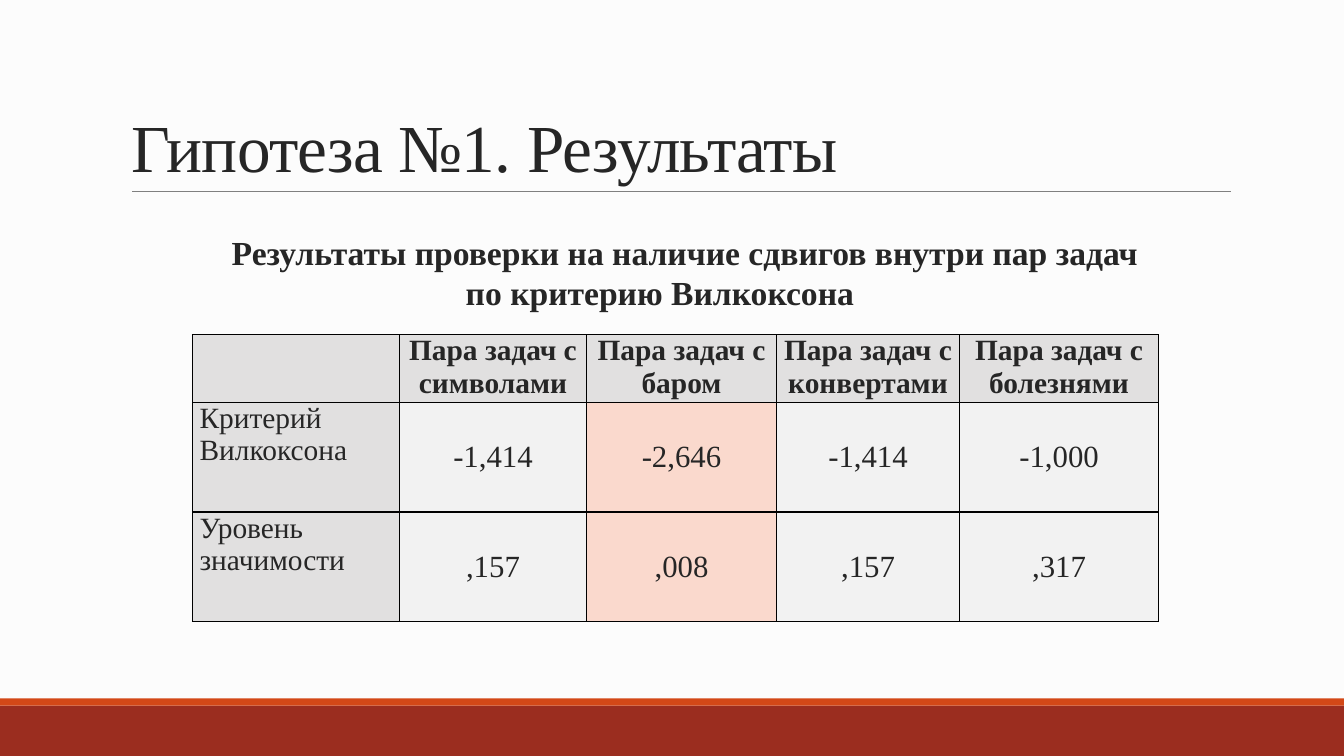
from lxml import etree
from pptx import Presentation
from pptx.dml.color import RGBColor
from pptx.enum import shapes, text
from pptx.oxml import ns
from pptx.util import Inches, Pt

FONT = "Times New Roman"
BACKGROUND = RGBColor(0xFC, 0xFC, 0xFC)
DARK_RED = RGBColor(0x9B, 0x2D, 0x1F)
ORANGE = RGBColor(0xD3, 0x48, 0x17)
RULE_GRAY = RGBColor(0x80, 0x80, 0x80)
INK = RGBColor(0x26, 0x26, 0x26)
HEADER_GRAY = RGBColor(0xE1, 0xE0, 0xE0)
CELL_GRAY = RGBColor(0xF2, 0xF2, 0xF2)
HIGHLIGHT = RGBColor(0xFA, 0xD9, 0xCD)
LEFT, CENTER = text.PP_ALIGN.LEFT, text.PP_ALIGN.CENTER


def write(frame, words, size, bold=False, align=CENTER):
    """Fill the first paragraph of a text frame and return it with its run."""
    para = frame.paragraphs[0]
    para.alignment = align
    span = para.add_run()
    span.text = words
    span.font.name = FONT
    span.font.size = Pt(size)
    span.font.bold = bold
    span.font.color.rgb = INK
    return para, span


def add_borders(cell):
    properties = cell._tc.get_or_add_tcPr()
    for side in ("lnL", "lnR", "lnT", "lnB"):
        line = etree.SubElement(properties, ns.qn(f"a:{side}"), w=str(Pt(1)))
        fill = etree.SubElement(line, ns.qn("a:solidFill"))
        etree.SubElement(fill, ns.qn("a:srgbClr"), val="000000")


deck = Presentation()
deck.slide_width, deck.slide_height = Inches(13.33), Inches(7.5)
page = deck.slides.add_slide(deck.slide_layouts[5])
page.background.fill.solid()
page.background.fill.fore_color.rgb = BACKGROUND

# Footer bands and the rule under the title
for top, height, color in ((7, 0.5, DARK_RED), (6.93, 0.07, ORANGE)):
    band = page.shapes.add_shape(
        shapes.MSO_SHAPE.RECTANGLE, 0, Inches(top), deck.slide_width, Inches(height))
    band.shadow.inherit = False
    band.fill.solid()
    band.fill.fore_color.rgb = color
    band.line.fill.background()

rule = page.shapes.add_connector(
    shapes.MSO_CONNECTOR.STRAIGHT, Inches(1.31), Inches(1.9), Inches(12.21), Inches(1.9))
rule.line.color.rgb = RULE_GRAY
rule.line.width = Pt(0.5)
etree.SubElement(rule._element.spPr, ns.qn("a:effectLst"))

# Title
title = page.shapes.title
title.left, title.top = Inches(1.2), Inches(0.31)
title.width, title.height = Inches(11), Inches(1.59)
title.text_frame.vertical_anchor = text.MSO_ANCHOR.BOTTOM
para, span = write(title.text_frame, "Гипотеза №1. Результаты", 48, align=LEFT)
para.line_spacing = 0.85
span.font._element.set("spc", "-50")

# Results table
rows = [
    ["", "Пара задач с символами", "Пара задач с баром",
     "Пара задач с конвертами", "Пара задач с болезнями"],
    ["Критерий Вилкоксона", "-1,414", "-2,646", "-1,414", "-1,000"],
    ["Уровень значимости", ",157", ",008", ",157", ",317"],
]
widths = [2.05, 1.86, 1.88, 1.82, 1.97]
heights = [0.67, 1.09, 1.09]
highlighted_column = 2

table = page.shapes.add_table(
    len(rows), len(widths), Inches(1.91), Inches(3.32),
    Inches(sum(widths)), Inches(sum(heights))).table
for column, width in zip(table.columns, widths):
    column.width = Inches(width)
for r, (row, height) in enumerate(zip(rows, heights)):
    table.rows[r].height = Inches(height)
    for c, words in enumerate(row):
        cell = table.cell(r, c)
        is_value = r > 0 and c > 0
        cell.margin_left = cell.margin_right = Inches(0.07)
        cell.margin_top = cell.margin_bottom = 0
        add_borders(cell)
        cell.fill.solid()
        if not is_value:
            cell.fill.fore_color.rgb = HEADER_GRAY
        elif c == highlighted_column:
            cell.fill.fore_color.rgb = HIGHLIGHT
        else:
            cell.fill.fore_color.rgb = CELL_GRAY
        if is_value:
            cell.vertical_anchor = text.MSO_ANCHOR.MIDDLE
        if words:
            write(cell.text_frame, words, 22 if is_value else 21,
                  bold=r == 0, align=CENTER if c else LEFT)

# Table caption
caption = page.shapes.add_textbox(Inches(1.3), Inches(2.25), Inches(10.19), Inches(0.91))
caption.text_frame.word_wrap = True
para, span = write(
    caption.text_frame,
    "Результаты проверки на наличие сдвигов внутри пар задач по критерию Вилкоксона",
    24, bold=True)
indents = para._p.get_or_add_pPr()
indents.set("marL", str(Inches(0.3)))
indents.set("indent", str(Inches(0.49)))

deck.save("out.pptx")
